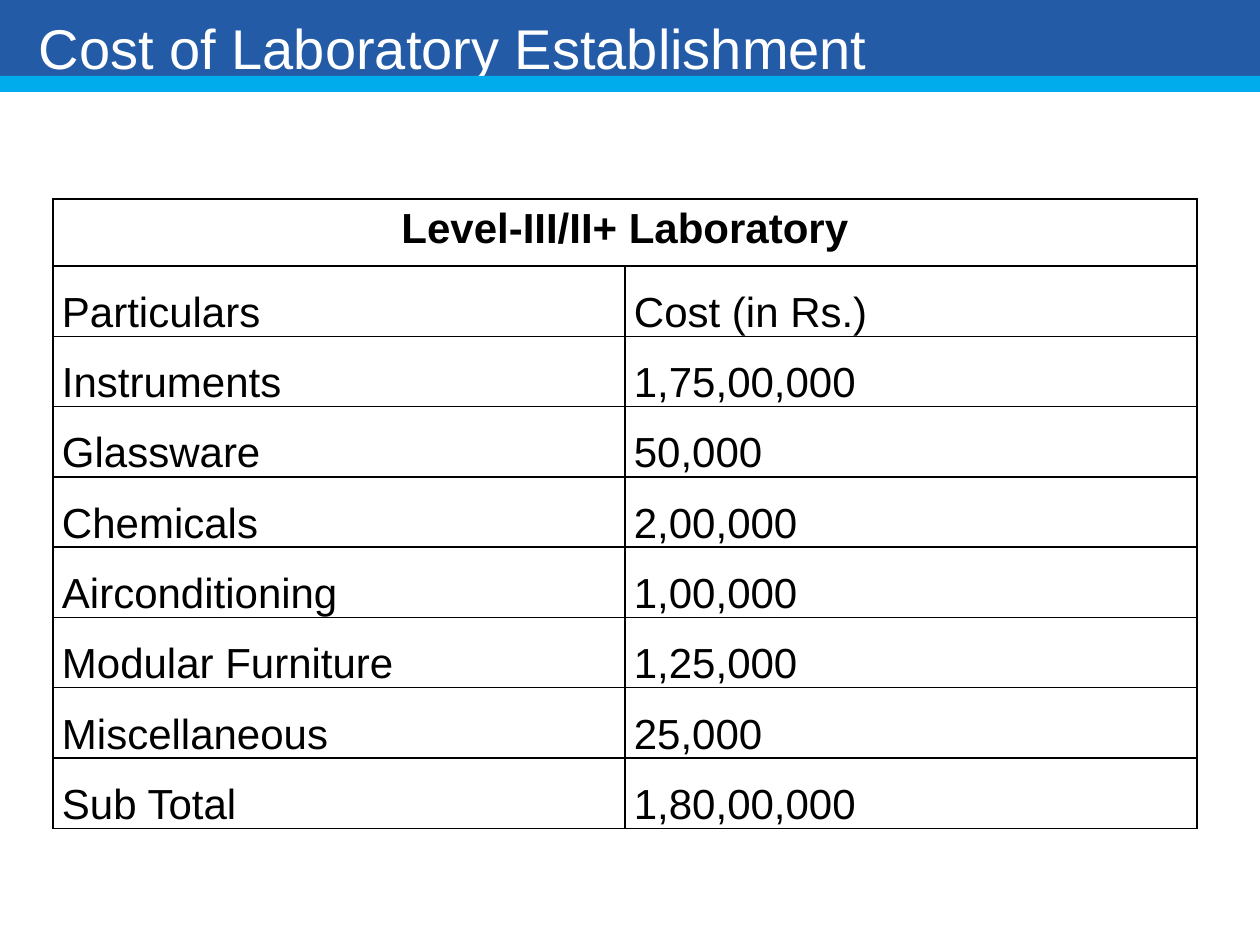
from lxml.etree import SubElement
from pptx import Presentation
from pptx.dml.color import RGBColor
from pptx.enum.shapes import MSO_SHAPE as SHAPE
from pptx.enum.text import MSO_ANCHOR as ANCHOR, PP_ALIGN as ALIGN
from pptx.oxml.ns import qn
from pptx.util import Emu, Pt

BLUE = RGBColor(0x24, 0x5B, 0xA7)
CYAN = RGBColor(0x00, 0xAC, 0xEB)
WHITE = RGBColor(0xFF, 0xFF, 0xFF)
BLACK = RGBColor(0x00, 0x00, 0x00)

HEADING = "Level-III/II+ Laboratory"
COSTS = [
    ("Particulars", "Cost (in Rs.)"),
    ("Instruments", "1,75,00,000"),
    ("Glassware", "50,000"),
    ("Chemicals", "2,00,000"),
    ("Airconditioning", "1,00,000"),
    ("Modular Furniture", "1,25,000"),
    ("Miscellaneous", "25,000"),
    ("Sub Total", "1,80,00,000"),
]


def px(n):
    return Emu(round(n * 914400 / 126))


class Deck:
    font = "Arial"

    def __init__(self, width, height):
        self.prs = Presentation()
        self.prs.slide_width, self.prs.slide_height = px(width), px(height)
        self.s = self.prs.slides.add_slide(self.prs.slide_layouts[6])

    def bar(self, x, y, w, h, color):
        sp = self.s.shapes.add_shape(SHAPE.RECTANGLE, px(x), px(y), px(w), px(h))
        sp.shadow.inherit = False
        sp.fill.solid()
        sp.fill.fore_color.rgb = color
        sp.line.fill.background()
        return sp

    def run(self, p, text, size, color, bold=False):
        r = p.add_run()
        r.text = text
        r.font.name, r.font.size, r.font.bold = self.font, Pt(size), bold
        r.font.color.rgb = color

    def title(self, sp, text, indent):
        tf = sp.text_frame
        tf.word_wrap = True
        tf.vertical_anchor = ANCHOR.BOTTOM
        tf.margin_left = px(indent)
        tf.margin_top = px(18)
        tf.margin_right = tf.margin_bottom = 0
        p = tf.paragraphs[0]
        p.alignment = ALIGN.LEFT
        self.run(p, text, 32, WHITE)

    def style_cell(self, cell):
        props = cell._tc.get_or_add_tcPr()
        for side in ("lnL", "lnR", "lnT", "lnB"):
            ln = SubElement(props, qn(f"a:{side}"), w=str(int(Pt(1))))
            fill = SubElement(ln, qn("a:solidFill"))
            SubElement(fill, qn("a:srgbClr"), val=str(BLACK))
        cell.fill.solid()
        cell.fill.fore_color.rgb = WHITE

    def table(self, x, y, col_w, row_h, heading, rows):
        n_rows, n_cols = len(rows) + 1, len(rows[0])
        table = self.s.shapes.add_table(
            n_rows, n_cols, px(x), px(y), px(col_w * n_cols), px(row_h * n_rows)
        ).table
        table.first_row = table.horz_banding = False
        for col in table.columns:
            col.width = px(col_w)
        for row in table.rows:
            row.height = px(row_h)
        for cell in table.iter_cells():
            self.style_cell(cell)

        head = table.cell(0, 0)
        head.merge(table.cell(0, n_cols - 1))
        p = head.text_frame.paragraphs[0]
        p.alignment = ALIGN.CENTER
        self.run(p, heading, 24, BLACK, bold=True)

        for i, row in enumerate(rows, 1):
            for j, text in enumerate(row):
                cell = table.cell(i, j)
                cell.margin_left = cell.margin_right = px(9)
                cell.margin_top = cell.margin_bottom = 0
                p = cell.text_frame.paragraphs[0]
                p.line_spacing = 1.5
                self.run(p, text, 24, BLACK)
        table.cell(n_rows - 1, 0).vertical_anchor = ANCHOR.MIDDLE


def main():
    deck = Deck(1260, 945)
    banner = deck.bar(0, -5, 1260, 86, BLUE)
    deck.title(banner, "Cost of Laboratory Establishment", 39)
    deck.bar(0, 76, 1260, 16, CYAN)
    deck.table(53, 199, 572, 67, HEADING, COSTS)
    deck.prs.save("out.pptx")


if __name__ == "__main__":
    main()
